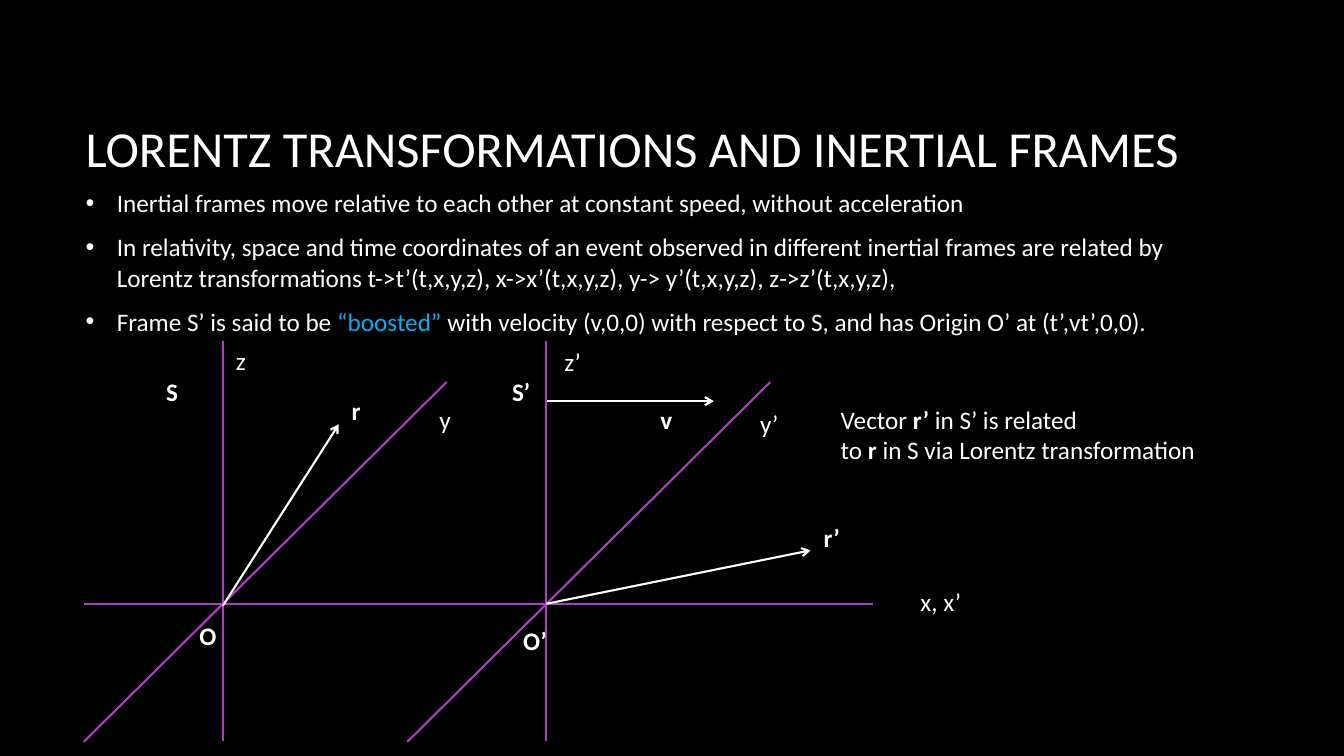
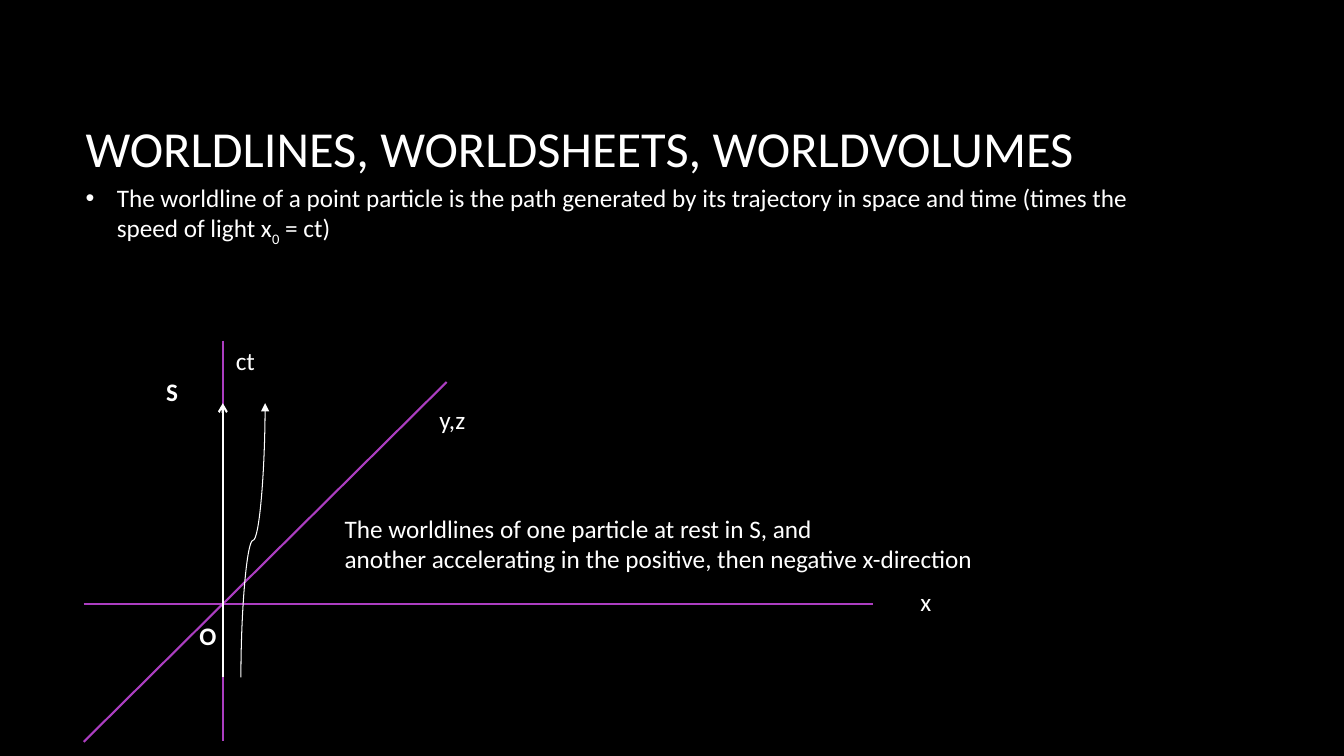
from dataclasses import dataclass

from lxml import etree
from pptx import Presentation
from pptx.dml.color import RGBColor
from pptx.enum.shapes import MSO_CONNECTOR
from pptx.enum.text import MSO_ANCHOR, MSO_AUTO_SIZE
from pptx.oxml.ns import qn
from pptx.util import Inches, Pt

STRAIGHT, CURVE = MSO_CONNECTOR.STRAIGHT, MSO_CONNECTOR.CURVE
MIDDLE, TOP = MSO_ANCHOR.MIDDLE, MSO_ANCHOR.TOP
FIT_SHAPE, NO_FIT = MSO_AUTO_SIZE.SHAPE_TO_FIT_TEXT, MSO_AUTO_SIZE.NONE


@dataclass(frozen=True)
class Theme:
    font: str = "Calibri"
    title_size: float = 36
    text_size: float = 18
    axis_width: float = 1.5
    curve_width: float = 0.75
    background: RGBColor = RGBColor(0x00, 0x00, 0x00)
    text: RGBColor = RGBColor(0xFF, 0xFF, 0xFF)
    axis: RGBColor = RGBColor(0xAC, 0x3E, 0xC1)
    accent: RGBColor = RGBColor(0x00, 0xB0, 0xF0)


theme = Theme()


def add_text(s, box, paragraphs, size=theme.text_size, anchor=TOP, wrap=False, bullets=False):
    tf = s.shapes.add_textbox(*map(Inches, box)).text_frame
    tf.word_wrap = wrap
    tf.auto_size = NO_FIT if wrap else FIT_SHAPE
    tf.vertical_anchor = anchor
    for i, runs in enumerate(paragraphs):
        p = tf.paragraphs[0] if i == 0 else tf.add_paragraph()
        if bullets:
            p.space_after = Pt(10)
            pPr = p._p.get_or_add_pPr()
            pPr.set("marL", str(Inches(0.31)))
            pPr.set("indent", str(Inches(-0.31)))
            etree.SubElement(pPr, qn("a:buFont")).set("typeface", "Arial")
            etree.SubElement(pPr, qn("a:buChar")).set("char", "•")
        for text, style in runs:
            r = p.add_run()
            r.text = text
            r.font.name = theme.font
            r.font.size = Pt(size)
            r.font.bold = style == "bold"
            r.font.color.rgb = theme.accent if style == "accent" else theme.text
            if style == "sub":
                r.font._element.set("baseline", "-25000")


def add_line(s, start, end, color, width=theme.axis_width, head=None, kind=STRAIGHT):
    c = s.shapes.add_connector(kind, *map(Inches, start + end))
    c.line.color.rgb = color
    c.line.width = Pt(width)
    if head:
        etree.SubElement(c.line._get_or_add_ln(), qn("a:tailEnd")).set("type", head)
    etree.SubElement(c._element.spPr, qn("a:effectLst"))
    return c


prs = Presentation()
prs.slide_width, prs.slide_height = Inches(13.33), Inches(7.5)
fill = prs.slide_master.background.fill
fill.solid()
fill.fore_color.rgb = theme.background

contents = [
    {
        "title": "LORENTZ TRANSFORMATIONS AND INERTIAL FRAMES",
        "body_top": 1.81,
        "bullets": [
            [("Inertial frames move relative to each other at constant speed, without acceleration", "")],
            [("In relativity, space and time coordinates of an event observed in different inertial "
              "frames are related by Lorentz transformations t->t’(t,x,y,z), x->x’(t,x,y,z), "
              "y-> y’(t,x,y,z), z->z’(t,x,y,z),", "")],
            [("Frame S’ is said to be ", ""), ("“boosted” ", "accent"),
             ("with velocity (v,0,0) with respect to S, and has Origin O’ at (t’,vt’,0,0).", "")],
        ],
        "frame_shifts": [0, 3.21],
        "arrows": [
            ((2.21, 6.01), (3.36, 4.21)),
            ((5.42, 5.99), (8.04, 5.46)),
            ((5.43, 3.98), (7.08, 3.98)),
        ],
        "labels": [
            (3.39, 3.87, 0.29, "r", "bold"),
            (9.03, 5.77, 0.61, "x, x’", ""),
            (4.26, 3.96, 0.32, "y", ""),
            (2.24, 3.38, 0.30, "z", ""),
            (5.09, 6.15, 0.44, "O’", "bold"),
            (8.07, 5.13, 0.37, "r’", "bold"),
            (5.50, 3.39, 0.37, "z’", ""),
            (7.44, 4.00, 0.39, "y’", ""),
            (6.45, 3.96, 0.32, "v", "bold"),
            (4.98, 3.68, 0.38, "S’", "bold"),
        ],
        "note_box": (8.24, 3.96, 3.76, 0.71),
        "note": [
            [("Vector ", ""), ("r’", "bold"), (" in S’ is related", "")],
            [("to ", ""), ("r", "bold"), (" in S via Lorentz transformation", "")],
        ],
    },
    {
        "title": "WORLDLINES, WORLDSHEETS, WORLDVOLUMES",
        "body_top": 1.76,
        "bullets": [
            [("The worldline of a point particle is the path generated by its trajectory in space "
              "and time (times the speed of light x", ""), ("0", "sub"), (" = ct)", "")],
        ],
        "frame_shifts": [0],
        "arrows": [((2.21, 6.72), (2.21, 4.0))],
        "labels": [
            (9.03, 5.77, 0.31, "x", ""),
            (4.26, 3.96, 0.46, "y,z", ""),
            (2.24, 3.38, 0.39, "ct", ""),
        ],
        "note_box": (3.32, 5.04, 6.57, 0.71),
        "note": [
            [("The worldlines of one particle at rest in S, and", "")],
            [("another accelerating in the positive, then negative x-direction", "")],
        ],
    },
]
shared_labels = [(1.88, 6.11, 0.37, "O", "bold"), (1.55, 3.68, 0.32, "S", "bold")]

for content in contents:
    s = prs.slides.add_slide(prs.slide_layouts[6])
    add_text(s, (0.75, 0.67, 11.08, 1.59), [[(content["title"], "")]],
             size=theme.title_size, anchor=MIDDLE, wrap=True)
    add_text(s, (0.75, content["body_top"], 11.08, 1.6), content["bullets"], wrap=True, bullets=True)

    add_line(s, (0.83, 5.99), (8.66, 5.99), theme.axis)
    for shift in content["frame_shifts"]:
        add_line(s, (2.21 + shift, 3.38), (2.21 + shift, 7.35), theme.axis)
        add_line(s, (0.83 + shift, 7.36), (4.43 + shift, 3.79), theme.axis)
    for start, end in content["arrows"]:
        add_line(s, start, end, theme.text, head="arrow")

    for left, top, width, text, style in shared_labels + content["labels"]:
        add_text(s, (left, top, width, 0.4), [[(text, style)]])
    add_text(s, content["note_box"], content["note"])

worldline = add_line(s, (3.87, 5.48), (1.15, 5.24), theme.text, theme.curve_width, "triangle", CURVE)
worldline._element.spPr.find(qn("a:xfrm")).set("rot", "5400000")

prs.save("out.pptx")
